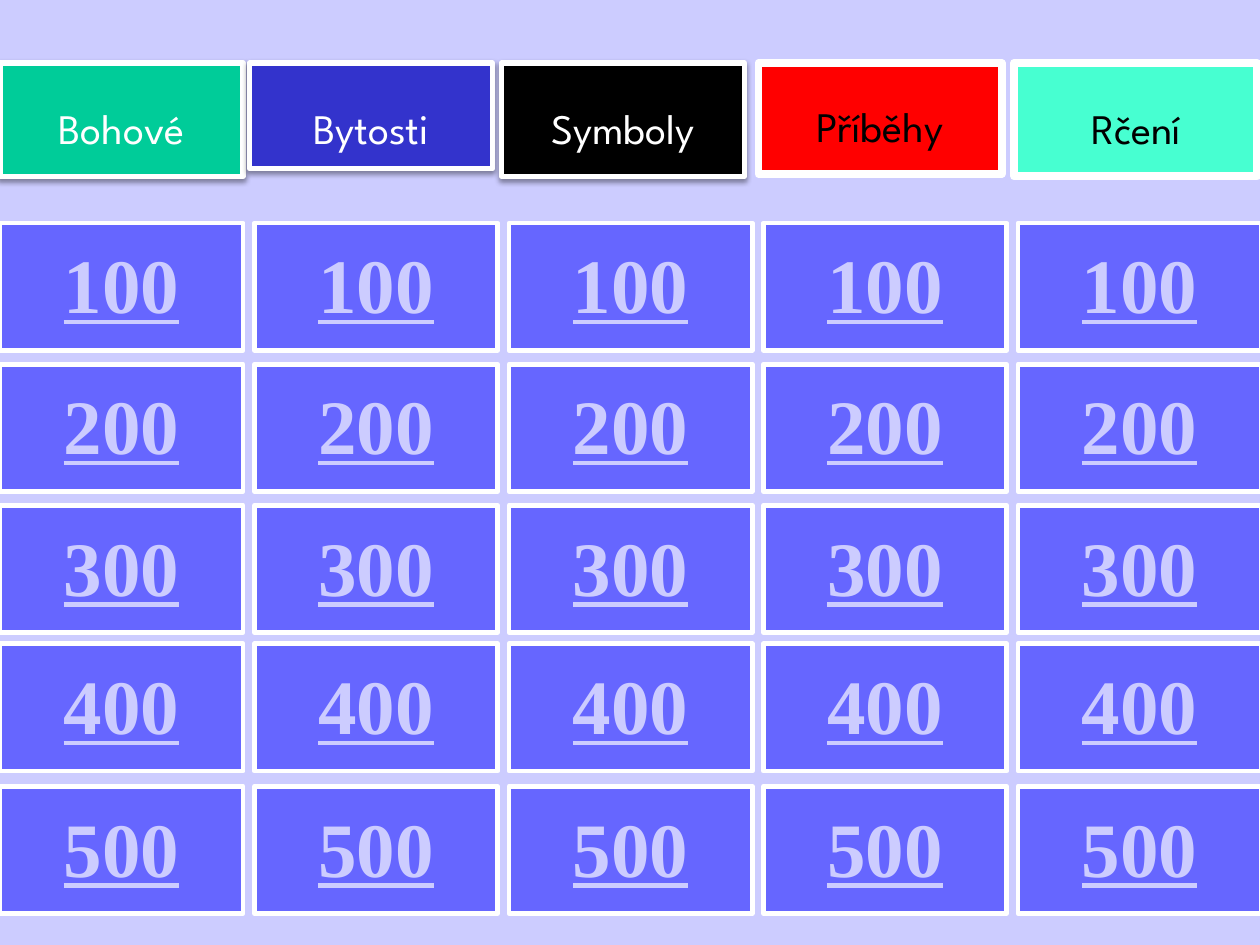
from lxml import etree
from pptx import Presentation
from pptx import util as u
from pptx.dml import color
from pptx.enum import shapes, text
from pptx.oxml import ns


def rgb(code):
    return color.RGBColor.from_string(code)


def box(label, spot, fill, edge, top, font):
    card = slide.shapes.add_shape(shapes.MSO_SHAPE.RECTANGLE, *map(u.Inches, spot))
    card.shadow.inherit = False
    card.fill.solid()
    card.fill.fore_color.rgb = rgb(fill)
    card.line.color.rgb = rgb("FFFFFF")
    card.line.width = u.Pt(edge)
    frame = card.text_frame
    look = {"margin_top": u.Inches(top), "margin_bottom": 0, "word_wrap": True,
            "vertical_anchor": text.MSO_ANCHOR.TOP}
    for key, val in look.items():
        setattr(frame, key, val)
    para = frame.paragraphs[0]
    para.alignment = text.PP_ALIGN.CENTER
    run = para.add_run()
    run.text = label
    for key, val in font.items():
        if key == "color":
            run.font.color.rgb = rgb(val)
        else:
            setattr(run.font, key, val)
    return card


deck = Presentation()
deck.slide_width = u.Inches(10)
deck.slide_height = u.Inches(7.5)
slide = deck.slides.add_slide(deck.slide_layouts[6])
slide.background.fill.solid()
slide.background.fill.fore_color.rgb = rgb("CCCCFF")

wide = 1.93
score = {"name": "Times New Roman", "size": u.Pt(44), "bold": True,
         "underline": True, "color": "CCCCFF"}
for row, top in enumerate([1.77, 2.89, 4.01, 5.11, 6.24], 1):
    for col in range(5):
        box(str(row * 100), (col * 2.02, top, wide, 1.01), "6666FF", 2.75, 0.11, score)

heads = [
    ("Bohové", 0, 0.9, "00CC99", "FFFFFF", 3, 0.31),
    ("Bytosti", 1.98, 0.84, "3333CC", "FFFFFF", 3, 0.31),
    ("Symboly", 3.98, 0.9, "000000", "FFFFFF", 3, 0.31),
    ("Příběhy", 6.02, 0.88, "FF0000", "000000", 4.5, 0.3),
    ("Rčení", 8.05, 0.9, "47FFD1", "000000", 4.5, 0.31),
]
for label, left, high, fill, ink, edge, top in heads:
    font = {"name": "League Spartan", "size": u.Pt(24), "color": ink}
    card = box(label, (left, 0.5, wide, high), fill, edge, top, font)
    if edge == 3:
        glow = card.element.spPr.find(ns.qn("a:effectLst"))
        cast = etree.SubElement(glow, ns.qn("a:outerShdw"), blurRad=str(u.Pt(3.1)),
                                dist=str(u.Pt(1.6)), dir="5400000", rotWithShape="0")
        tone = etree.SubElement(cast, ns.qn("a:srgbClr"), val="000000")
        etree.SubElement(tone, ns.qn("a:alpha"), val="38000")

deck.save("out.pptx")
